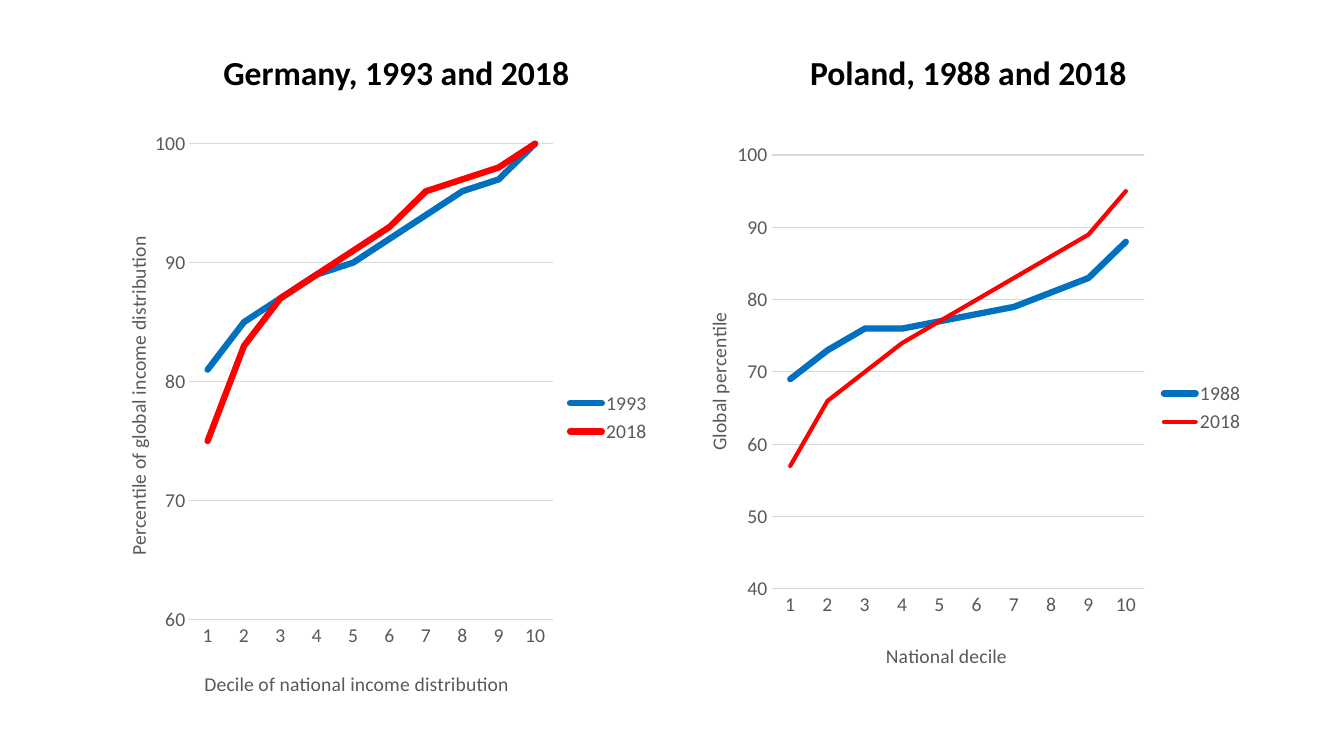
from lxml import etree
from pptx import Presentation
from pptx.chart.data import CategoryChartData
from pptx.dml.color import RGBColor
from pptx.enum.chart import XL_CHART_TYPE, XL_LEGEND_POSITION, XL_TICK_MARK
from pptx.enum.text import MSO_ANCHOR, PP_ALIGN
from pptx.oxml.ns import qn
from pptx.util import Inches, Pt

LINE = XL_CHART_TYPE.LINE
RIGHT = XL_LEGEND_POSITION.RIGHT
NO_TICK = XL_TICK_MARK.NONE
BOTTOM, CENTER = MSO_ANCHOR.BOTTOM, PP_ALIGN.CENTER

BLACK = RGBColor(0, 0, 0)
GRAY = RGBColor(0x59, 0x59, 0x59)
PALE = RGBColor(0xD9, 0xD9, 0xD9)
BLUE = RGBColor(0x00, 0x70, 0xC0)
RED = RGBColor(0xFF, 0x00, 0x00)

WIDE, HIGH = 13.33, 7.5
DECILES = [str(n) for n in range(1, 11)]
HEAD = {"name": "Calibri", "size": Pt(24), "bold": True}
LABEL = {"name": "Calibri", "size": Pt(14), "bold": False}

# Boxes are inches on the slide; plot and title spots are shares of the chart
PANELS = [
    {
        "head": "Germany, 1993 and 2018", "slot": 1,
        "top": (1.11, 0.42, 5.64, 0.9), "box": (0.92, 1.19, 5.64, 5.9),
        "plot": (0.17, 0.04, 0.64, 0.8), "low": 60,
        "x": ("Decile of national income distribution", 0.19, 0.92),
        "y": ("Percentile of global income distribution", 0.05, 0.19),
        "lines": [
            ("1993", BLUE, 4.5, (81, 85, 87, 89, 90, 92, 94, 96, 97, 100)),
            ("2018", RED, 4.5, (75, 83, 87, 89, 91, 93, 96, 97, 98, 100)),
        ],
    },
    {
        "head": "Poland, 1988 and 2018", "slot": 3,
        "top": (6.77, 0.42, 5.67, 0.9), "box": (6.67, 1.32, 5.78, 5.45),
        "plot": (0.17, 0.04, 0.64, 0.79), "low": 40,
        "x": ("National decile", 0.36, 0.92),
        "y": ("Global percentile", 0.05, 0.32),
        "lines": [
            ("1988", BLUE, 4.5, (69, 73, 76, 76, 77, 78, 79, 81, 83, 88)),
            ("2018", RED, 3, (57, 66, 70, 74, 77, 80, 83, 86, 89, 95)),
        ],
    },
]


def style(item, values):
    for key, value in values.items():
        setattr(item, key, value)


def style_font(font, values, color):
    style(font, values)
    font.color.rgb = color


def place(node, index, spot, inner=False):
    """Pin a chart part at shares of the chart's width and height."""
    for old in node.findall(qn("c:layout")):
        node.remove(old)
    layout = etree.Element(qn("c:layout"))
    node.insert(index, layout)
    manual = etree.SubElement(layout, qn("c:manualLayout"))
    parts = [("layoutTarget", "inner")] if inner else []
    parts += [("xMode", "edge"), ("yMode", "edge")]
    parts += zip("xywh", map(str, spot))
    for tag, value in parts:
        etree.SubElement(manual, qn("c:" + tag)).set("val", value)


def add_head(slide, panel):
    shape = slide.placeholders[panel["slot"]]
    box = map(Inches, panel["top"])
    style(shape, dict(zip(("left", "top", "width", "height"), box)))
    frame = shape.text_frame
    style(frame, {"vertical_anchor": BOTTOM, "margin_bottom": Inches(0.4),
                  "word_wrap": True})
    para = frame.paragraphs[0]
    style(para, {"alignment": CENTER, "line_spacing": 0.9,
                 "space_before": Pt(10)})
    run = para.add_run()
    run.text = panel["head"]
    style_font(run.font, HEAD, BLACK)


def format_axis(axis, title, turn):
    text, left, top = title
    style(axis, {"major_tick_mark": NO_TICK, "minor_tick_mark": NO_TICK})
    style_font(axis.tick_labels.font, LABEL, GRAY)
    frame = axis.axis_title.text_frame
    run = frame.paragraphs[0].add_run()
    run.text = text
    style_font(run.font, LABEL, GRAY)
    node = axis.axis_title._element
    body = node.find(".//" + qn("a:bodyPr"))
    body.set("rot", str(turn * 60000))
    body.set("vert", "horz")
    place(node, 1, (left, top))


def add_lines(slide, panel):
    data = CategoryChartData()
    data.categories = DECILES
    for name, _, _, values in panel["lines"]:
        data.add_series(name, values)
    box = map(Inches, panel["box"])
    chart = slide.shapes.add_chart(LINE, *box, data).chart
    style(chart, {"has_title": False, "has_legend": True})
    style_font(chart.font, {"name": "Calibri", "size": Pt(10)}, BLACK)
    style(chart.legend, {"position": RIGHT, "include_in_layout": False})
    style_font(chart.legend.font, LABEL, GRAY)

    # Axes and grid
    across, up = chart.category_axis, chart.value_axis
    format_axis(across, panel["x"], 0)
    format_axis(up, panel["y"], -90)
    style(up, {"minimum_scale": panel["low"], "maximum_scale": 100,
               "major_unit": 10, "has_major_gridlines": True})
    for line in (across.format.line, up.major_gridlines.format.line):
        line.color.rgb = PALE
        line.width = Pt(0.75)
    up.format.line.fill.background()

    # Series
    plot = chart.plots[0]
    plot.vary_by_categories = False
    for series, (_, color, width, _) in zip(plot.series, panel["lines"]):
        series.smooth = False
        line = series.format.line
        line.color.rgb = color
        line.width = Pt(width)
        series._element.find(".//" + qn("a:ln")).set("cap", "rnd")

    area = chart._chartSpace.find(".//" + qn("c:plotArea"))
    place(area, 0, panel["plot"], inner=True)


def main():
    deck = Presentation()
    style(deck, {"slide_width": Inches(WIDE), "slide_height": Inches(HIGH)})
    # Comparison layout: its two text slots hold the headings
    slide = deck.slides.add_slide(deck.slide_layouts[4])
    for panel in PANELS:
        add_head(slide, panel)
        add_lines(slide, panel)
    # Unused slots
    for slot in list(slide.placeholders):
        if not slot.has_text_frame or not slot.text_frame.text:
            slot._element.getparent().remove(slot._element)
    deck.save("out.pptx")


if __name__ == "__main__":
    main()
